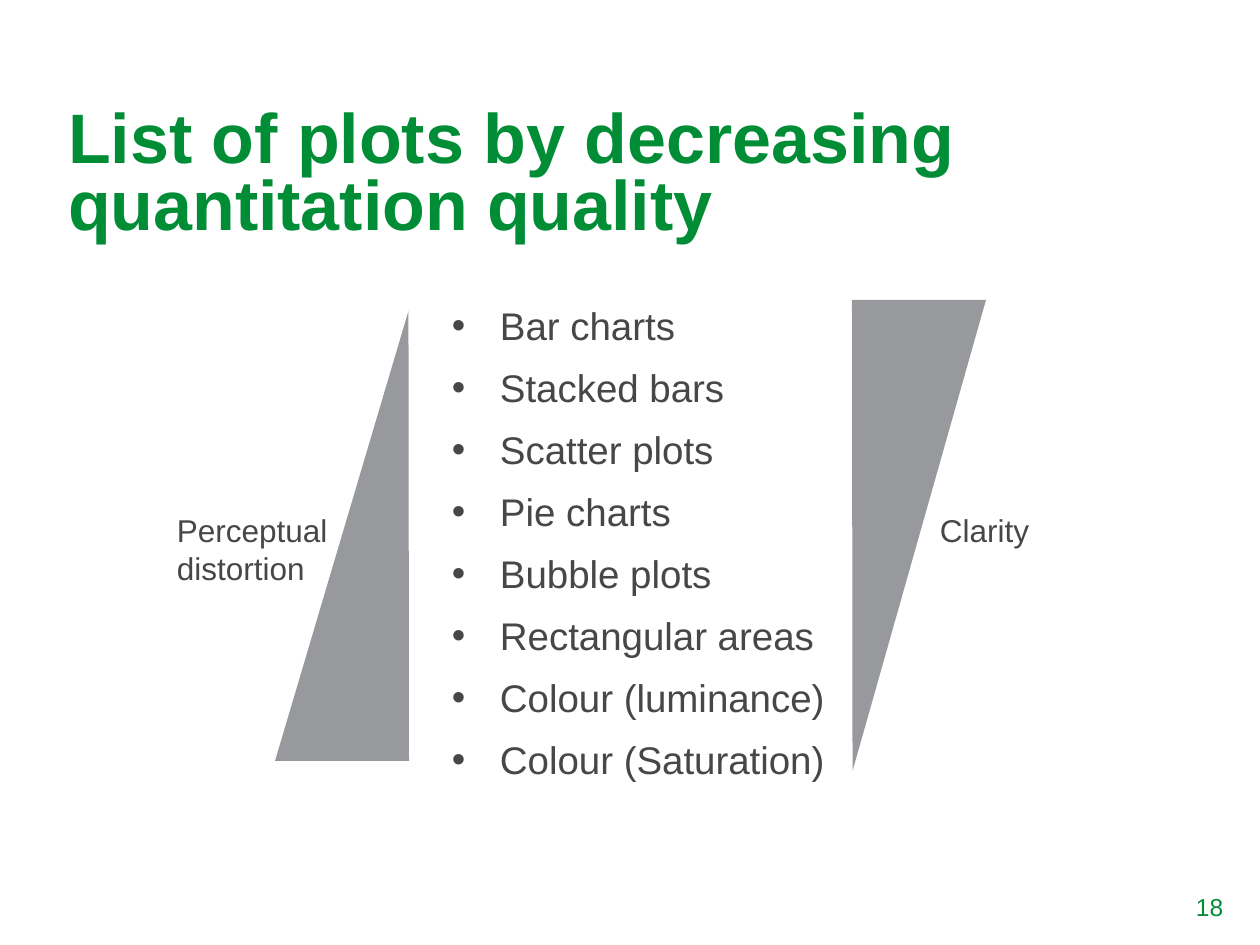
from dataclasses import dataclass

from lxml.etree import SubElement
from pptx import Presentation
from pptx.dml.color import RGBColor
from pptx.enum.shapes import MSO_SHAPE
from pptx.enum.text import MSO_ANCHOR, PP_ALIGN
from pptx.oxml.ns import qn
from pptx.slide import Slide
from pptx.text.text import TextFrame
from pptx.util import Pt

EMU_PER_PX = 7257
GREEN = RGBColor(0x00, 0x8D, 0x36)
CHARCOAL = RGBColor(0x46, 0x47, 0x49)
GREY = RGBColor(0x97, 0x99, 0x9C)
FONT = "Arial"
BULLET_INDENT = 48
NO_INSET = (0, 0)
BOX_INSET = (13, 6)

PLOTS = [
    "Bar charts",
    "Stacked bars",
    "Scatter plots",
    "Pie charts",
    "Bubble plots",
    "Rectangular areas",
    "Colour (luminance)",
    "Colour (Saturation)",
]


@dataclass(frozen=True)
class Box:
    left: int
    top: int
    width: int
    height: int

    def emu(self) -> tuple[int, ...]:
        return tuple(px(v) for v in (self.left, self.top, self.width, self.height))


@dataclass(frozen=True)
class Scale:
    wedge: Box
    rotation: int
    label: Box
    label_lines: list[str]


SCALES = [
    Scale(Box(275, 311, 134, 450), 0, Box(164, 505, 178, 89), ["Perceptual", "distortion"]),
    Scale(Box(852, 300, 134, 471), 180, Box(927, 505, 116, 50), ["Clarity"]),
]


def px(length: int) -> int:
    return length * EMU_PER_PX


def add_bullet(paragraph) -> None:
    properties = paragraph._p.get_or_add_pPr()
    properties.set("marL", str(px(BULLET_INDENT)))
    properties.set("indent", str(-px(BULLET_INDENT)))
    SubElement(properties, qn("a:buFont"), typeface=FONT)
    SubElement(properties, qn("a:buChar"), char="•")


def write(frame: TextFrame, lines: list[str], *, size: int, color: RGBColor,
          bold: bool = False, anchor: MSO_ANCHOR = MSO_ANCHOR.TOP,
          inset: tuple[int, int] = BOX_INSET, line_spacing: float = 1.0,
          gap: int = 0, bulleted: bool = False) -> None:
    frame.word_wrap = True
    frame.vertical_anchor = anchor
    frame.margin_left = frame.margin_right = px(inset[0])
    frame.margin_top = frame.margin_bottom = px(inset[1])
    for index, line in enumerate(lines):
        paragraph = frame.add_paragraph() if index else frame.paragraphs[0]
        paragraph.alignment = PP_ALIGN.LEFT
        paragraph.line_spacing = line_spacing
        paragraph.space_before = Pt(gap if index else 0)
        if bulleted:
            add_bullet(paragraph)
        run = paragraph.add_run()
        run.text = line
        run.font.name = FONT
        run.font.size = Pt(size)
        run.font.bold = bold
        run.font.color.rgb = color


def add_text(slide: Slide, box: Box, lines: list[str], **text_format) -> None:
    write(slide.shapes.add_textbox(*box.emu()).text_frame, lines, **text_format)


def add_scale(slide: Slide, scale: Scale) -> None:
    wedge = slide.shapes.add_shape(MSO_SHAPE.ISOSCELES_TRIANGLE, *scale.wedge.emu())
    wedge.adjustments[0] = 0.996
    wedge.rotation = scale.rotation
    wedge.shadow.inherit = False
    wedge.fill.solid()
    wedge.fill.fore_color.rgb = GREY
    wedge.line.fill.background()
    add_text(slide, scale.label, scale.label_lines, size=18, color=CHARCOAL)


def main() -> None:
    presentation = Presentation()
    presentation.slide_width = px(1260)
    presentation.slide_height = px(945)
    slide = presentation.slides.add_slide(presentation.slide_layouts[5])

    title = slide.shapes.title
    title.left, title.top, title.width, title.height = Box(68, 59, 1125, 185).emu()
    write(title.text_frame, ["List of plots by decreasing quantitation quality"],
          size=40, color=GREEN, bold=True, anchor=MSO_ANCHOR.BOTTOM,
          inset=NO_INSET, line_spacing=0.8)

    add_text(slide, Box(452, 300, 721, 525), PLOTS, size=22, color=CHARCOAL,
             inset=NO_INSET, line_spacing=1.04, gap=8, bulleted=True)
    add_text(slide, Box(1183, 882, 77, 50), ["18"], size=14, color=GREEN,
             anchor=MSO_ANCHOR.MIDDLE)
    for scale in SCALES:
        add_scale(slide, scale)

    presentation.save("out.pptx")


if __name__ == "__main__":
    main()
